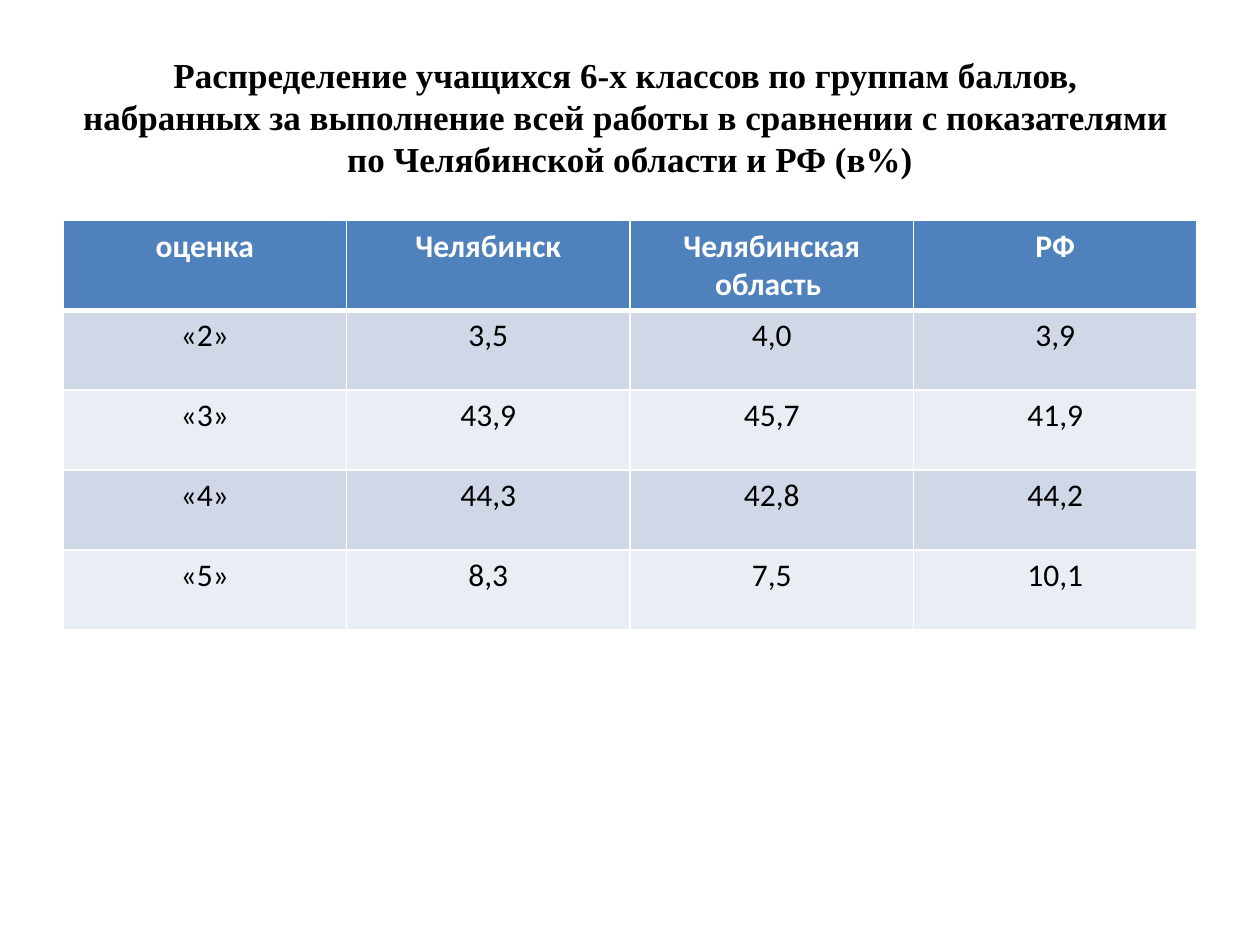
from copy import deepcopy
from dataclasses import dataclass

from lxml.etree import SubElement
from pptx import Presentation
from pptx.dml.color import RGBColor
from pptx.enum.text import MSO_ANCHOR as Anchor, MSO_AUTO_SIZE as AutoSize, PP_ALIGN as Align
from pptx.oxml.ns import qn
from pptx.util import Cm, Pt


@dataclass(frozen=True)
class Theme:
    """Colours, fonts and type sizes of the slide."""
    header: str = "4F81BD"
    bands: tuple = ("D0D8E8", "E9EDF4")
    white: str = "FFFFFF"
    black: str = "000000"
    title_font: str = "Times New Roman"
    table_font: str = "Calibri"
    title_size: int = 20
    table_size: int = 18
    thin: int = 1
    thick: int = 3


THEME = Theme()
TITLE = (
    "Распределение учащихся 6-х классов по группам баллов, \v"
    "набранных за выполнение всей работы в сравнении с показателями \v"
    "по Челябинской области и РФ (в%)"
)
GRADES = (
    ("оценка", "Челябинск", "Челябинская область ", "РФ"),
    ("«2»", "3,5", "4,0", "3,9"),
    ("«3»", "43,9", "45,7", "41,9"),
    ("«4»", "44,3", "42,8", "44,2"),
    ("«5»", "8,3", "7,5", "10,1"),
)


def write_text(frame, text, *, font, size, color, bold=False):
    """Fill a text frame with one centred paragraph, line breaks included."""
    frame.text = text
    paragraph = frame.paragraphs[0]
    paragraph.alignment = Align.CENTER
    for run in paragraph.runs:
        run.font.name = font
        run.font.size = Pt(size)
        run.font.bold = bold
        run.font.color.rgb = RGBColor.from_string(color)
    for line_break in paragraph._p.findall(qn("a:br")):
        line_break.insert(0, deepcopy(paragraph.runs[0]._r.rPr))


def set_borders(cell, **widths):
    """Draw white cell borders with the given width in points per side."""
    properties = cell._tc.get_or_add_tcPr()
    for position, side in enumerate("LRTB"):
        line = SubElement(properties, qn(f"a:ln{side}"), w=str(Pt(widths.get(side, THEME.thin))))
        fill = SubElement(line, qn("a:solidFill"))
        SubElement(fill, qn("a:srgbClr"), val=THEME.white)
        properties.insert(position, line)


def add_title(slide):
    """Place and format the title."""
    title = slide.shapes.title
    title.left, title.top, title.width, title.height = Cm(1.27), Cm(0.76), Cm(22.86), Cm(3.18)
    frame = title.text_frame
    frame.word_wrap = True
    frame.auto_size = AutoSize.NONE
    frame.vertical_anchor = Anchor.MIDDLE
    write_text(frame, TITLE, font=THEME.title_font, size=THEME.title_size,
               color=THEME.black, bold=True)


def add_grade_table(slide):
    """Add the table of grade shares with a header and banded rows."""
    row_height = Cm(1.61)
    table = slide.shapes.add_table(len(GRADES), len(GRADES[0]), Cm(1.27), Cm(4.45),
                                   Cm(22.86), row_height * len(GRADES)).table
    for row_index, values in enumerate(GRADES):
        is_header = row_index == 0
        fill = THEME.header if is_header else THEME.bands[(row_index - 1) % 2]
        widths = {0: {"B": THEME.thick}, 1: {"T": THEME.thick}}.get(row_index, {})
        for column_index, value in enumerate(values):
            cell = table.cell(row_index, column_index)
            write_text(cell.text_frame, value, font=THEME.table_font, size=THEME.table_size,
                       color=THEME.white if is_header else THEME.black, bold=is_header)
            cell.fill.solid()
            cell.fill.fore_color.rgb = RGBColor.from_string(fill)
            set_borders(cell, **widths)


def main():
    """Build and save the presentation."""
    presentation = Presentation()
    presentation.slide_width, presentation.slide_height = Cm(25.4), Cm(19.05)
    slide = presentation.slides.add_slide(presentation.slide_layouts[5])
    add_title(slide)
    add_grade_table(slide)
    presentation.save("out.pptx")


if __name__ == "__main__":
    main()
